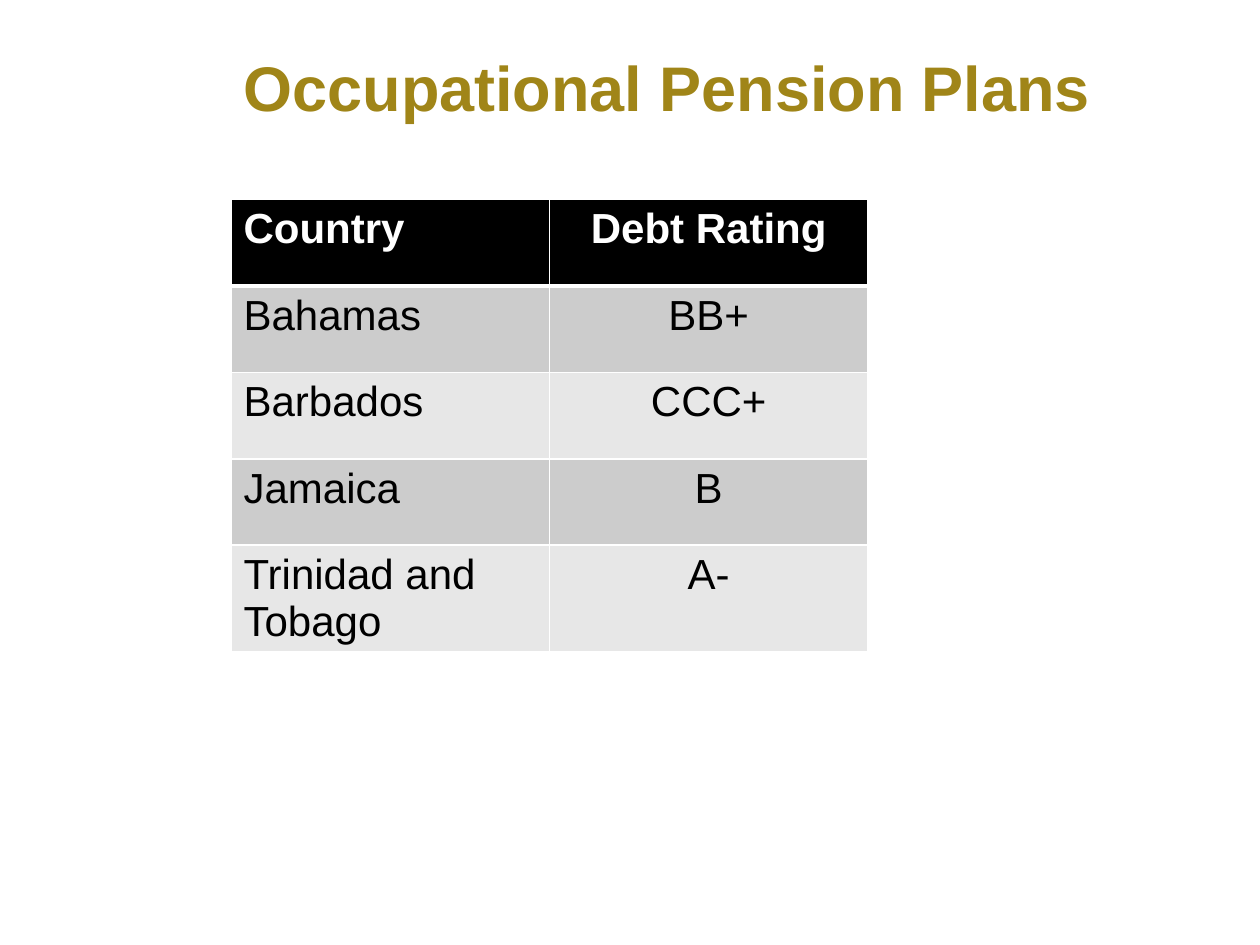
from lxml import etree
from pptx import Presentation
from pptx.dml.color import RGBColor
from pptx.enum.text import MSO_ANCHOR, PP_ALIGN
from pptx.oxml.ns import qn
from pptx.util import Pt

LEFT, CENTER = PP_ALIGN.LEFT, PP_ALIGN.CENTER
MIDDLE = MSO_ANCHOR.MIDDLE
FONT = "Arial"
TITLE_ONLY = 5
COLORS = {
    "title": "A08518",
    "header": "000000",
    "header_text": "FFFFFF",
    "body_text": "000000",
    "odd_band": "CCCCCC",
    "even_band": "E7E7E7",
    "border": "FFFFFF",
}
RATINGS = [
    ("Country", "Debt Rating"),
    ("Bahamas", "BB+"),
    ("Barbados", "CCC+"),
    ("Jamaica", "B"),
    ("Trinidad and Tobago", "A-"),
]


def rgb(name):
    return RGBColor.from_string(COLORS[name])


def add_run(paragraph, text, size, color, bold):
    run = paragraph.add_run()
    run.text = text
    run.font.name = FONT
    run.font.size = Pt(size)
    run.font.bold = bold
    run.font.color.rgb = rgb(color)


def set_borders(cell, widths):
    properties = cell._tc.get_or_add_tcPr()
    for position, (side, width) in enumerate(widths.items()):
        line = etree.Element(qn(f"a:ln{side}"), w=str(Pt(width)))
        fill = etree.SubElement(line, qn("a:solidFill"))
        etree.SubElement(fill, qn("a:srgbClr"), val=COLORS["border"])
        properties.insert(position, line)


def place_title(slide, left, top, width, height):
    title = slide.shapes.title
    title.left, title.top = Pt(left), Pt(top)
    title.width, title.height = Pt(width), Pt(height)
    frame = title.text_frame
    frame.word_wrap = True
    frame.vertical_anchor = MIDDLE
    heading = frame.paragraphs[0]
    heading.alignment = LEFT
    add_run(heading, "Occupational Pension Plans", 36, "title", True)


def place_ratings(slide, left, top, width, height):
    table = slide.shapes.add_table(
        len(RATINGS), len(RATINGS[0]), Pt(left), Pt(top), Pt(width), Pt(height)
    ).table
    for row, entries in enumerate(RATINGS):
        is_header = row == 0
        band = "header" if is_header else "odd_band" if row % 2 else "even_band"
        text_color = "header_text" if is_header else "body_text"
        borders = {"L": 1, "R": 1, "T": 3 if row == 1 else 1, "B": 3 if is_header else 1}
        for column, entry in enumerate(entries):
            cell = table.cell(row, column)
            cell.fill.solid()
            cell.fill.fore_color.rgb = rgb(band)
            set_borders(cell, borders)
            paragraph = cell.text_frame.paragraphs[0]
            paragraph.alignment = CENTER if column else LEFT
            add_run(paragraph, entry, 24, text_color, is_header)


def main():
    presentation = Presentation()
    presentation.slide_width, presentation.slide_height = Pt(720), Pt(540)
    slide = presentation.slides.add_slide(presentation.slide_layouts[TITLE_ONLY])
    place_title(slide, 132, 9, 546, 81)
    place_ratings(slide, 132, 114, 364, 247)
    presentation.save("out.pptx")


if __name__ == "__main__":
    main()
